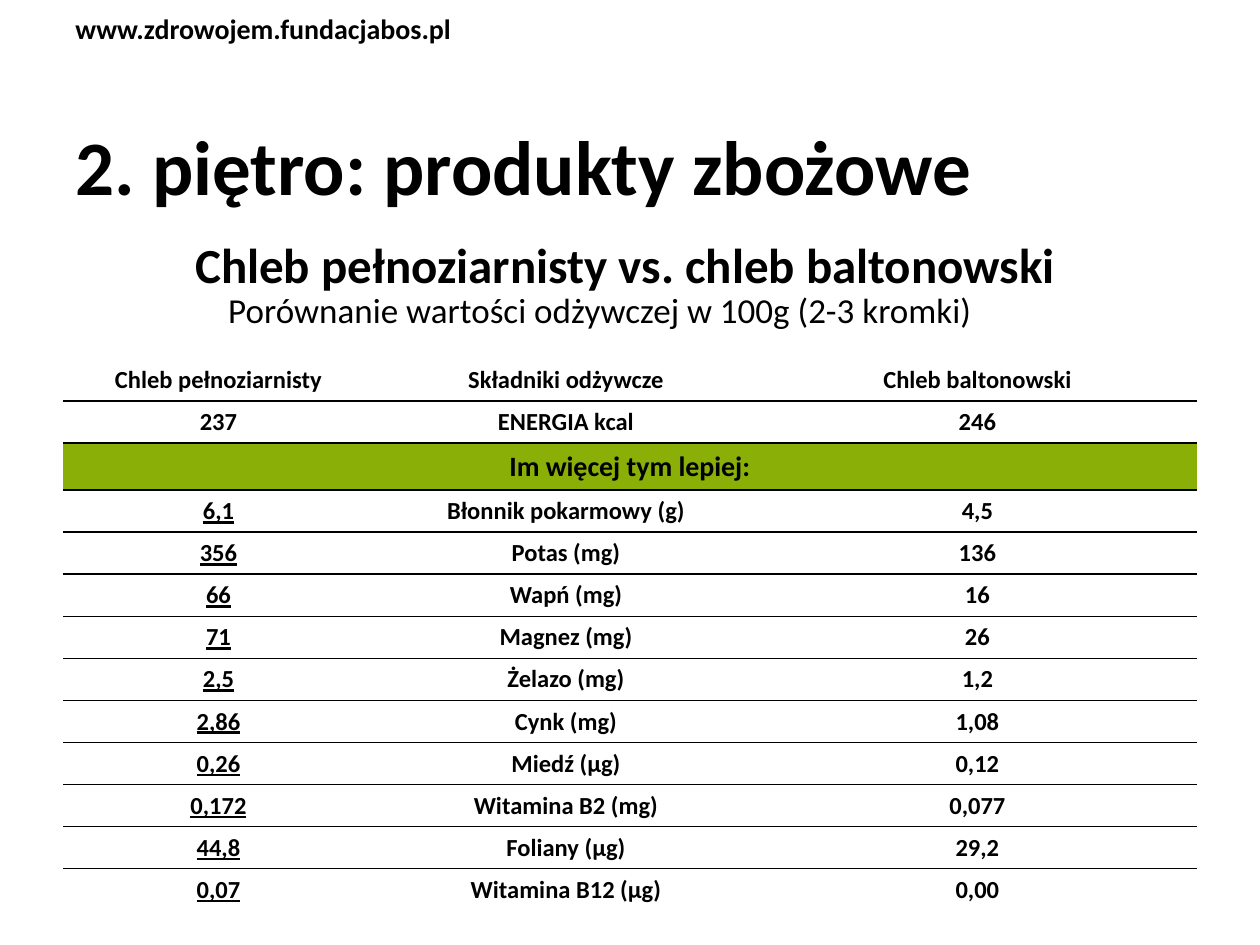
from dataclasses import dataclass

from lxml import etree
from pptx import Presentation
from pptx import util as u
from pptx.dml.color import RGBColor
from pptx.enum import text
from pptx.oxml.ns import qn

PX = u.Inches(1) // 126


@dataclass(frozen=True)
class Theme:
    font: str = "Calibri"
    ink: str = "000000"
    band: str = "8AAF06"
    title: int = 44
    heading: int = 28
    note: int = 20
    label: int = 16
    cell: int = 14
    rule: int = 1


T = Theme()
LEFT, CENTER = text.PP_ALIGN.LEFT, text.PP_ALIGN.CENTER
TOP, MIDDLE = text.MSO_ANCHOR.TOP, text.MSO_ANCHOR.MIDDLE

# wording, (left, top, width, height) in px, size, bold, alignment, anchor
TEXTS = [
    ("www.zdrowojem.fundacjabos.pl", (63, 5, 476, 47), T.label, True, LEFT, TOP),
    ("2. piętro: produkty zbożowe", (63, 86, 1134, 157), T.title, True, LEFT, MIDDLE),
    ("Chleb pełnoziarnisty vs. chleb baltonowski", (-5, 185, 1260, 157),
     T.heading, True, CENTER, MIDDLE),
    ("Porównanie wartości odżywczej w 100g (2-3 kromki)", (134, 282, 932, 69),
     T.note, False, CENTER, TOP),
]

HEADER = ("Chleb pełnoziarnisty", "Składniki odżywcze", "Chleb baltonowski")
ENERGY = ("237", "ENERGIA kcal", "246")
BAND = ("Im więcej tym lepiej:", "", "")
NUTRIENTS = [
    ("6,1", "Błonnik pokarmowy (g)", "4,5"),
    ("356", "Potas (mg)", "136"),
    ("66", "Wapń (mg)", "16"),
    ("71", "Magnez (mg)", "26"),
    ("2,5", "Żelazo (mg)", "1,2"),
    ("2,86", "Cynk (mg)", "1,08"),
    ("0,26", "Miedź (µg)", "0,12"),
    ("0,172", "Witamina B2 (mg)", "0,077"),
    ("44,8", "Foliany (µg)", "29,2"),
    ("0,07", "Witamina B12 (µg)", "0,00"),
]
ROWS = [HEADER, ENERGY, BAND, *NUTRIENTS]
BAND_ROW = ROWS.index(BAND)
COLUMNS = (311, 384, 439)
ROW_H, BAND_H = 42, 47
TABLE_LEFT, TABLE_TOP = 63, 359


def write(tf, words, align, **font):
    p = tf.paragraphs[0]
    p.alignment = align
    r = p.add_run()
    r.text = words
    r.font.color.rgb = RGBColor.from_string(T.ink)
    for name, value in {"name": T.font, **font}.items():
        setattr(r.font, name, value)


def add_text(s, words, box, size, bold, align, anchor):
    tf = s.shapes.add_textbox(*(v * PX for v in box)).text_frame
    tf.word_wrap = True
    tf.vertical_anchor = anchor
    write(tf, words, align, size=u.Pt(size), bold=bold)


def set_borders(cell, ruled):
    """Draw the sides named in ruled and clear the others."""
    tc_pr = cell._tc.get_or_add_tcPr()
    for side in "LRTB":
        ln = etree.SubElement(tc_pr, qn(f"a:ln{side}"), w=str(u.Pt(T.rule)))
        if side in ruled:
            fill = etree.SubElement(ln, qn("a:solidFill"))
            etree.SubElement(fill, qn("a:srgbClr"), val=T.ink)
        else:
            etree.SubElement(ln, qn("a:noFill"))


def fill_cell(cell, words, row, col):
    is_band = row == BAND_ROW
    set_borders(cell, ("T" if row else "") + ("B" if row < len(ROWS) - 1 else ""))
    if is_band:
        cell.fill.solid()
        cell.fill.fore_color.rgb = RGBColor.from_string(T.band)
    else:
        cell.fill.background()
    cell.margin_left = cell.margin_right = 15 * PX
    is_value = row and not is_band and col != 1
    cell.vertical_anchor = MIDDLE if is_value else TOP
    if words:
        write(cell.text_frame, words, CENTER, bold=True,
              size=u.Pt(T.label if is_band else T.cell),
              underline=row > BAND_ROW and col == 0)


def add_nutrition_table(s):
    heights = [BAND_H if row is BAND else ROW_H for row in ROWS]
    box = (TABLE_LEFT, TABLE_TOP, sum(COLUMNS), sum(heights))
    table = s.shapes.add_table(len(ROWS), len(COLUMNS), *(v * PX for v in box)).table
    table.first_row = table.horz_banding = False
    for column, width in zip(table.columns, COLUMNS):
        column.width = width * PX
    for i, (height, values) in enumerate(zip(heights, ROWS)):
        table.rows[i].height = height * PX
        for j, words in enumerate(values):
            fill_cell(table.cell(i, j), words, i, j)
    table.cell(BAND_ROW, 0).merge(table.cell(BAND_ROW, len(COLUMNS) - 1))


def main():
    prs = Presentation()
    prs.slide_width, prs.slide_height = 1260 * PX, 945 * PX
    s = prs.slides.add_slide(prs.slide_layouts[6])
    for item in TEXTS:
        add_text(s, *item)
    add_nutrition_table(s)
    prs.save("out.pptx")


if __name__ == "__main__":
    main()
